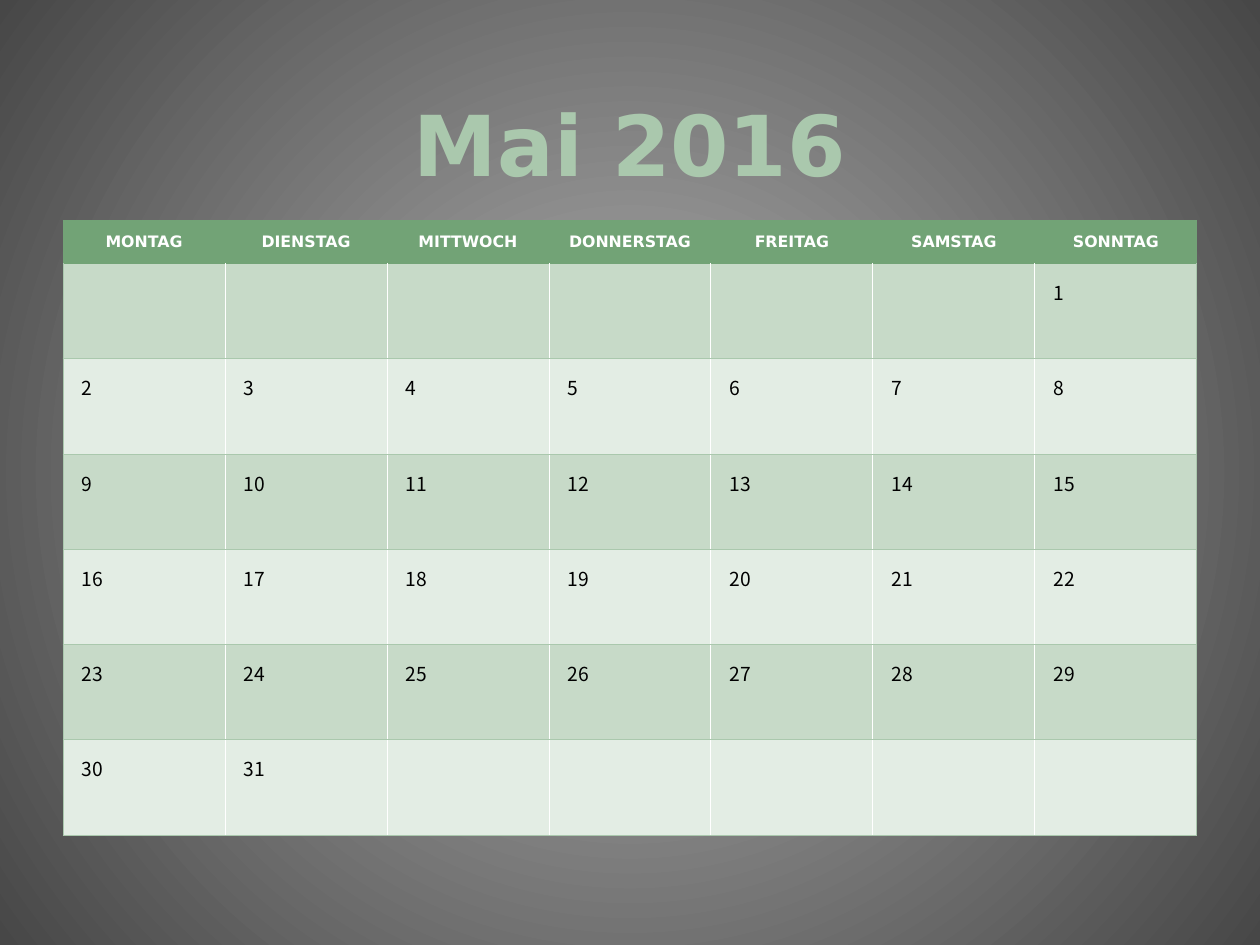
from lxml import etree
from pptx import Presentation
from pptx.dml.color import RGBColor
from pptx.enum.text import MSO_ANCHOR, PP_ALIGN
from pptx.oxml.ns import qn
from pptx.util import Pt

TITLE = "Mai 2016"
DAYS = ["MONTAG", "DIENSTAG", "MITTWOCH", "DONNERSTAG", "FREITAG", "SAMSTAG", "SONNTAG"]
FIRST, LAST, WEEKS = 6, 31, 6  # the month starts in column 6, Sunday

HEAD, LINE, WHITE, BLACK = "72A376", "AAC8AD", "FFFFFF", "000000"
BANDS = ["C7DAC8", "E3EDE4"]
GLOW = ["B1B1B1", "474747"]
BOLD, PLAIN = "DejaVu Sans", "Noto Sans CJK SC"

LEFT, WIDTH = 36, 648
TOP, HEAD_H, WEEK_H = 126, 24.6, 54.45


def rgb(code):
    return RGBColor.from_string(code)


def write(frame, text, font, size, color, bold=False, align=None):
    frame.text = text
    para = frame.paragraphs[0]
    para.alignment = align
    for run in para.runs:
        run.font.name, run.font.size, run.font.bold = font, Pt(size), bold
        run.font.color.rgb = rgb(color)
    return para


def edge(cell, **colors):
    """Draw half-point borders; the keys L, R, T, B name the sides."""
    props = cell._tc.get_or_add_tcPr()
    for spot, side in enumerate("LRTB"):
        line = etree.Element(qn("a:ln" + side), w=str(Pt(0.5)))
        fill = etree.SubElement(line, qn("a:solidFill"))
        etree.SubElement(fill, qn("a:srgbClr"), val=colors[side])
        props.insert(spot, line)


def paint(cell, color):
    cell.fill.solid()
    cell.fill.fore_color.rgb = rgb(color)


def glow(slide):
    """Fill the background with a circular gradient from the centre."""
    fill = slide.background.fill
    fill.gradient()
    for stop, color in zip(fill.gradient_stops, GLOW):
        stop.color.rgb = rgb(color)
    grad = slide.element.find(".//" + qn("a:gradFill"))
    grad.remove(grad.find(qn("a:lin")))
    shade = etree.SubElement(grad, qn("a:path"))
    shade.set("path", "circle")
    etree.SubElement(shade, qn("a:fillToRect"), {side: "50000" for side in "ltrb"})


def main():
    deck = Presentation()
    deck.slide_width, deck.slide_height = Pt(720), Pt(540)
    slide = deck.slides.add_slide(deck.slide_layouts[6])
    glow(slide)

    frame = slide.shapes.add_textbox(Pt(LEFT), Pt(24), Pt(WIDTH), Pt(90)).text_frame
    frame.word_wrap = True
    frame.vertical_anchor = MSO_ANCHOR.BOTTOM
    write(frame, TITLE, BOLD, 48, LINE, True, PP_ALIGN.CENTER)

    cols = len(DAYS)
    height = HEAD_H + WEEKS * WEEK_H
    table = slide.shapes.add_table(
        WEEKS + 1, cols, Pt(LEFT), Pt(TOP), Pt(WIDTH), Pt(height)).table
    for col in table.columns:
        col.width = Pt(WIDTH / cols)
    for row, tall in zip(table.rows, [HEAD_H] + [WEEK_H] * WEEKS):
        row.height = Pt(tall)

    for col, name in enumerate(DAYS):
        cell = table.cell(0, col)
        cell.vertical_anchor = MSO_ANCHOR.MIDDLE
        paint(cell, HEAD)
        edge(cell, L=HEAD, R=HEAD, T=HEAD, B=HEAD)
        write(cell.text_frame, name, BOLD, 9, WHITE, True, PP_ALIGN.CENTER)

    for spot in range(WEEKS * cols):
        week, col = divmod(spot, cols)
        cell = table.cell(week + 1, col)
        paint(cell, BANDS[week % 2])
        edge(cell, L=WHITE if col else LINE, R=WHITE if col < cols - 1 else LINE,
             T=LINE if week else HEAD, B=LINE)
        day = spot - FIRST + 1
        if 1 <= day <= LAST:
            para = write(cell.text_frame, str(day), PLAIN, 11, BLACK)
            para.line_spacing = 1.3
            para._p.get_or_add_pPr().set("marL", str(Pt(3.6)))

    deck.save("out.pptx")


if __name__ == "__main__":
    main()
